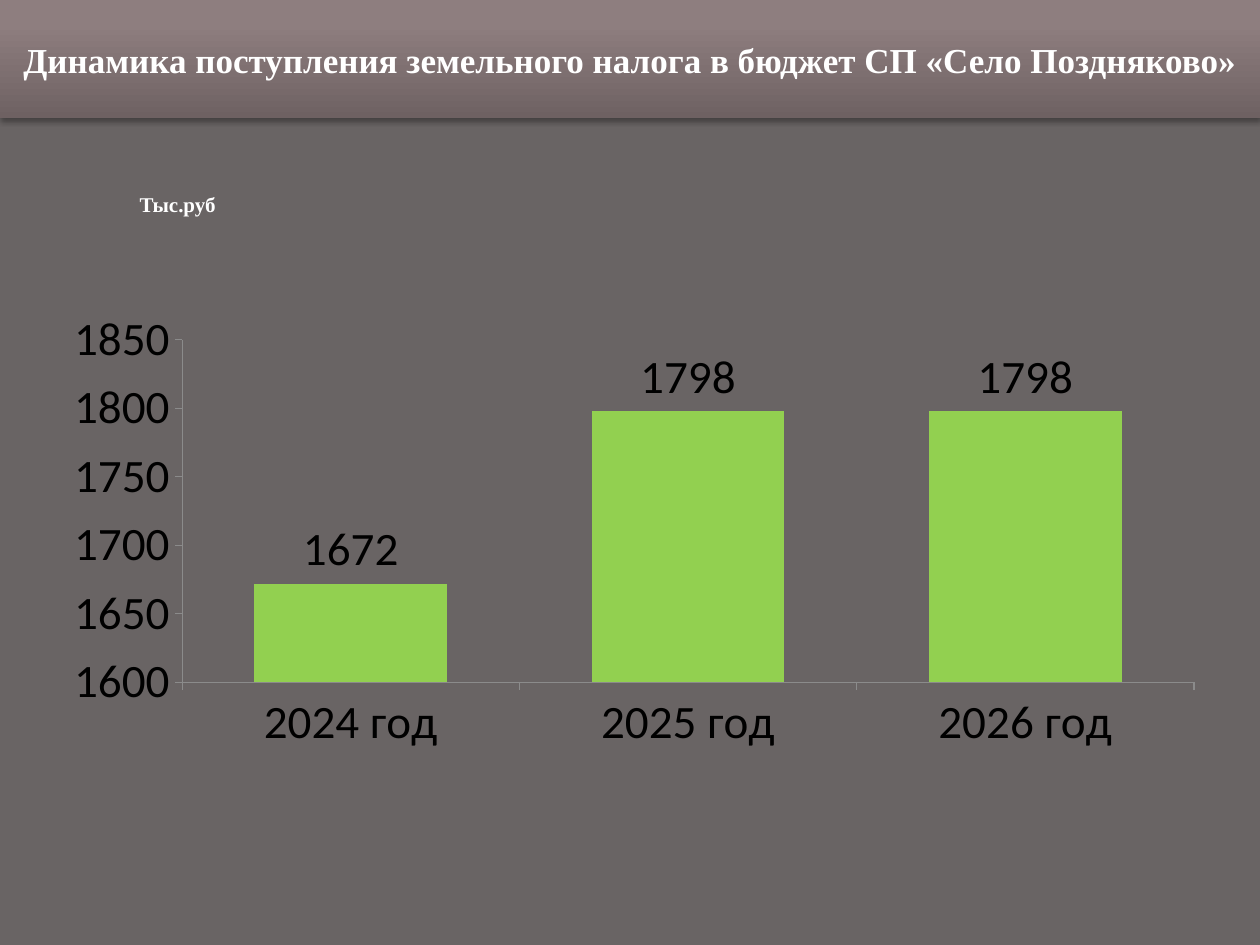
from dataclasses import dataclass

from lxml.etree import SubElement
from pptx import Presentation
from pptx.chart.data import CategoryChartData
from pptx.dml.color import RGBColor
from pptx.enum.chart import XL_CHART_TYPE, XL_LABEL_POSITION, XL_TICK_LABEL_POSITION, XL_TICK_MARK
from pptx.enum.shapes import MSO_SHAPE
from pptx.enum.text import MSO_ANCHOR, PP_ALIGN
from pptx.oxml import parse_xml
from pptx.oxml.ns import nsdecls, qn
from pptx.util import Inches, Pt


@dataclass(frozen=True)
class Theme:
    background: str = "696464"
    banner_stops: tuple = ((0, "6E6162"), (80, "8E7E7F"), (100, "8F7E80"))
    shadow: str = "000000"
    heading: str = "FFFFFF"
    chart_text: str = "000000"
    bar: str = "92D050"
    axis: str = "8B8B8B"
    heading_font: str = "Times New Roman"
    chart_font: str = "Calibri"
    title_size: float = 20
    unit_size: float = 12
    chart_size: float = 26.9


THEME = Theme()


def rgb(value):
    return RGBColor.from_string(value)


def style_font(font, *, name, size, color, bold=False):
    font.name, font.size, font.bold = name, Pt(size), bold
    font.color.rgb = rgb(color)


def write_text(frame, text, *, size, anchor=MSO_ANCHOR.TOP, align=PP_ALIGN.CENTER):
    frame.word_wrap = True
    frame.vertical_anchor = anchor
    paragraph = frame.paragraphs[0]
    paragraph.alignment = align
    run = paragraph.add_run()
    run.text = text
    style_font(run.font, name=THEME.heading_font, size=size, color=THEME.heading, bold=True)


def add_banner(slide, text):
    """Full-width title bar with an upward gradient and a soft shadow below."""
    banner = slide.shapes.add_shape(MSO_SHAPE.RECTANGLE, 0, 0, Inches(10), Inches(0.94))
    banner.line.fill.background()
    stops = "".join(
        f'<a:gs pos="{position * 1000}"><a:srgbClr val="{color}"/></a:gs>'
        for position, color in THEME.banner_stops
    )
    gradient = parse_xml(
        f'<a:gradFill {nsdecls("a")} rotWithShape="1"><a:gsLst>{stops}</a:gsLst>'
        '<a:lin ang="16200000" scaled="0"/></a:gradFill>'
    )
    shadow = parse_xml(
        f'<a:effectLst {nsdecls("a")}><a:outerShdw blurRad="{Pt(3.1)}" dist="{Pt(1.8)}" '
        f'dir="5400000" rotWithShape="0"><a:srgbClr val="{THEME.shadow}">'
        '<a:alpha val="35000"/></a:srgbClr></a:outerShdw></a:effectLst>'
    )
    outline = banner.element.spPr.find(qn("a:ln"))
    outline.addprevious(gradient)
    outline.addnext(shadow)
    write_text(banner.text_frame, text, size=THEME.title_size, anchor=MSO_ANCHOR.MIDDLE)


def add_unit_label(slide, text):
    label = slide.shapes.add_textbox(Inches(0.67), Inches(1.47), Inches(1.48), Inches(0.3))
    write_text(label.text_frame, text, size=THEME.unit_size)


def place_plot(chart, **fractions):
    """Fix the inner plot area as fractions of the chart frame."""
    plot_area = chart.element.find(".//" + qn("c:plotArea"))
    for old_layout in plot_area.findall(qn("c:layout")):
        plot_area.remove(old_layout)
    layout = parse_xml(f'<c:layout {nsdecls("c")}><c:manualLayout/></c:layout>')
    settings = {"layoutTarget": "inner", "xMode": "edge", "yMode": "edge", **fractions}
    for tag, value in settings.items():
        SubElement(layout[0], qn(f"c:{tag}"), val=str(value))
    plot_area.insert(0, layout)


def style_axis(axis):
    axis.has_major_gridlines = False
    axis.major_tick_mark = XL_TICK_MARK.OUTSIDE
    axis.minor_tick_mark = XL_TICK_MARK.NONE
    axis.format.line.color.rgb = rgb(THEME.axis)
    axis.format.line.width = Pt(0.75)


def add_tax_chart(slide, revenue):
    data = CategoryChartData(number_format="General")
    data.categories = list(revenue)
    data.add_series("Series 1", list(revenue.values()))
    chart = slide.shapes.add_chart(
        XL_CHART_TYPE.COLUMN_CLUSTERED,
        Inches(0.57), Inches(2.47), Inches(9.22), Inches(3.8), data,
    ).chart
    chart.has_title = chart.has_legend = False
    chart_format = dict(name=THEME.chart_font, size=THEME.chart_size, color=THEME.chart_text)
    style_font(chart.font, **chart_format)

    for axis in (chart.category_axis, chart.value_axis):
        style_axis(axis)
    chart.category_axis.tick_label_position = XL_TICK_LABEL_POSITION.LOW
    chart.value_axis.minimum_scale = 1600
    chart.value_axis.maximum_scale = 1850
    chart.value_axis.major_unit = 50

    columns = chart.plots[0]
    columns.gap_width = 75
    columns.vary_by_categories = False
    fill = columns.series[0].format.fill
    fill.solid()
    fill.fore_color.rgb = rgb(THEME.bar)
    labels = columns.series[0].data_labels
    labels.show_value = True
    labels.position = XL_LABEL_POSITION.OUTSIDE_END
    style_font(labels.font, **chart_format)
    place_plot(chart, x=0.095, y=0.046, w=0.871, h=0.726)


def main():
    presentation = Presentation()
    presentation.slide_width, presentation.slide_height = Inches(10), Inches(7.5)
    slide = presentation.slides.add_slide(presentation.slide_layouts[6])
    slide.background.fill.solid()
    slide.background.fill.fore_color.rgb = rgb(THEME.background)

    add_banner(slide, "Динамика поступления земельного налога в бюджет СП «Село Поздняково»")
    add_tax_chart(slide, {"2024 год": 1672, "2025 год": 1798, "2026 год": 1798})
    add_unit_label(slide, "Тыс.руб")
    presentation.save("out.pptx")


if __name__ == "__main__":
    main()
